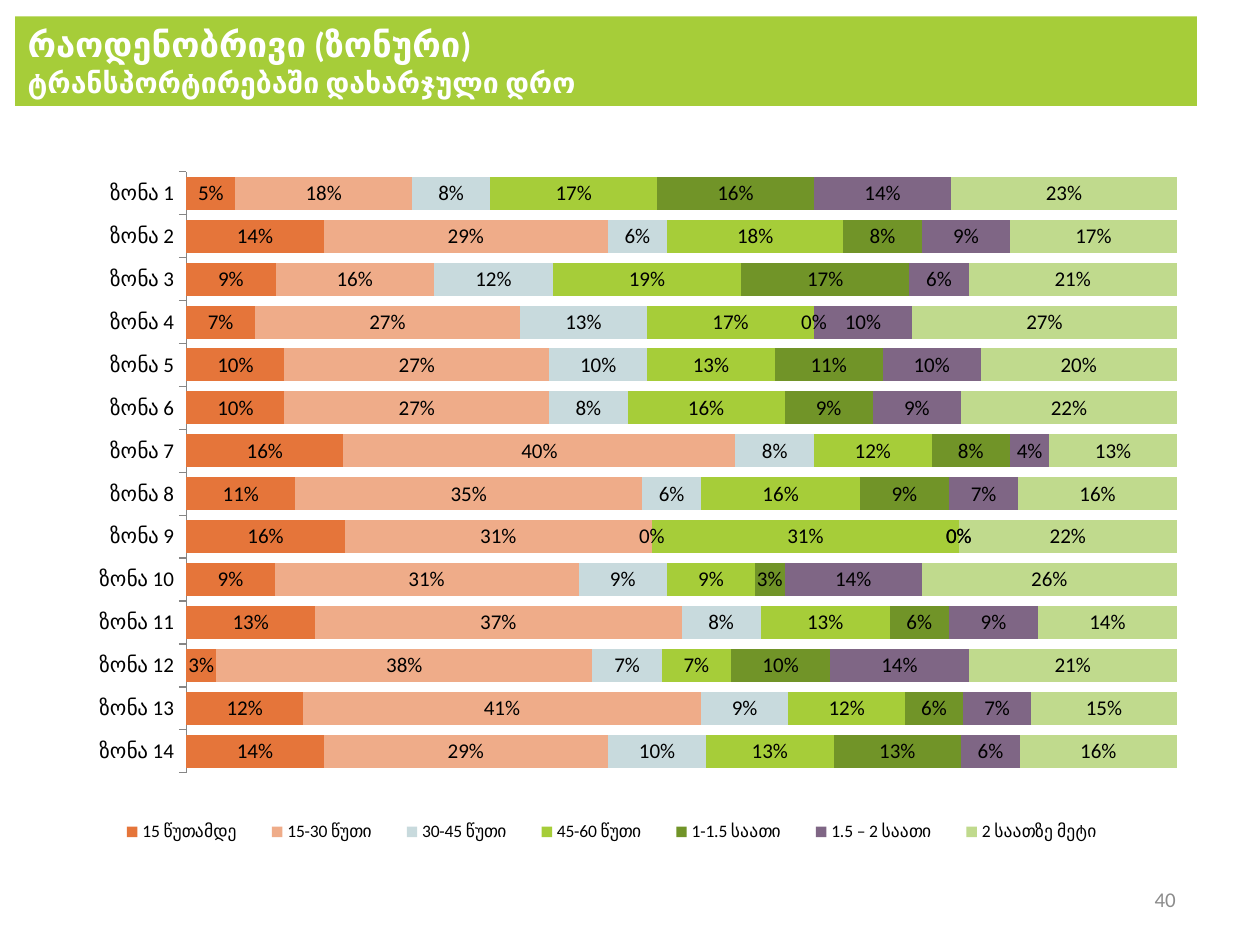
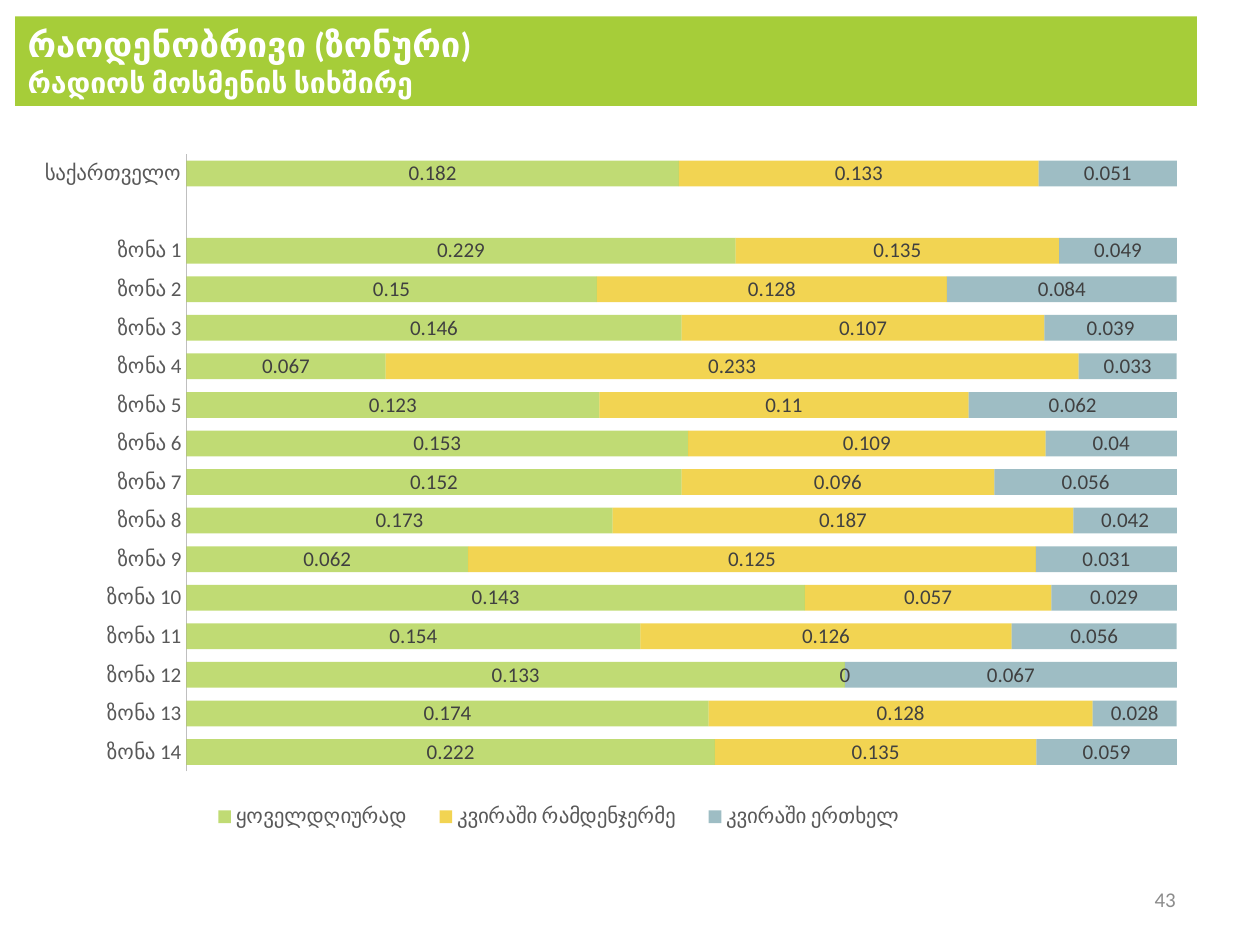
"""Build two zonal survey slides with full-width stacked bar charts."""
import pptx
import pptx.chart.data
import pptx.dml.color
import pptx.enum.chart
import pptx.enum.shapes
import pptx.enum.text
import pptx.oxml
import pptx.oxml.ns
import pptx.util

Inches = pptx.util.Inches
Pt = pptx.util.Pt

FONT = "Calibri"
COLORS = {
    "band": "A6CD39", "white": "FFFFFF", "number": "8C8C8C", "black": "000000",
    "axis": "868686", "orange": "E5753A", "peach": "EFAC89", "ice": "C8DADD",
    "moss": "719428", "plum": "7F6685", "pale": "C0DA8D",
    "gold": "EDC209", "teal": "76A2AB",
    "label": "404040", "tick": "595959", "light axis": "BFBFBF",
}
HEADING = "რაოდენობრივი (ზონური)"
ZONES = [f"ზონა {number}" for number in range(1, 15)]

SLIDES = [
    {
        "topic": "ტრანსპორტირებაში დახარჯული დრო",
        "number": 40,
        "box": (0.12, 0.99, 9.38, 5.94),
        "categories": ZONES,
        "series": [
            ("15 წუთამდე", "orange",
             [.05, .14, .09, .07, .10, .10, .16, .11, .16, .09, .13, .03, .12, .14]),
            ("15-30 წუთი", "peach",
             [.18, .29, .16, .27, .27, .27, .40, .35, .31, .31, .37, .38, .41, .29]),
            ("30-45 წუთი", "ice",
             [.08, .06, .12, .13, .10, .08, .08, .06, 0, .09, .08, .07, .09, .10]),
            ("45-60 წუთი", "band",
             [.17, .18, .19, .17, .13, .16, .12, .16, .31, .09, .13, .07, .12, .13]),
            ("1-1.5 საათი", "moss",
             [.16, .08, .17, 0, .11, .09, .08, .09, 0, .03, .06, .10, .06, .13]),
            ("1.5 – 2 საათი", "plum",
             [.14, .09, .06, .10, .10, .09, .04, .07, 0, .14, .09, .14, .07, .06]),
            ("2 საათზე მეტი", "pale",
             [.23, .17, .21, .27, .20, .22, .13, .16, .22, .26, .14, .21, .15, .16]),
        ],
        "style": {"gap": 30, "format": "0%", "opacity": 100, "tick": "OUTSIDE",
                  "axis": "axis", "text": "black", "label": "black",
                  "legend size": 10, "legend": (0.07, 0.915, 0.87, 0.06)},
    },
    {
        "topic": "რადიოს მოსმენის სიხშირე",
        "number": 43,
        "box": (0.12, 0.84, 9.38, 6.1),
        "categories": ["საქართველო", ""] + ZONES,
        "series": [
            ("ყოველდღიურად", "band",
             [.182, None, .229, .15, .146, .067, .123, .153, .152, .173, .062,
              .143, .154, .133, .174, .222]),
            ("კვირაში რამდენჯერმე", "gold",
             [.133, None, .135, .128, .107, .233, .11, .109, .096, .187, .125,
              .057, .126, 0, .128, .135]),
            ("კვირაში ერთხელ", "teal",
             [.051, None, .049, .084, .039, .033, .062, .04, .056, .042, .031,
              .029, .056, .067, .028, .059]),
        ],
        "style": {"gap": 50, "format": "General", "opacity": 70, "tick": "NONE",
                  "axis": "light axis", "text": "tick", "label": "label",
                  "legend size": 12, "legend": (0.15, 0.895, 0.62, 0.06)},
    },
]
PLOT_LAYOUT = (0.145, 0.063, 0.838, 0.803)


def rgb(name):
    return pptx.dml.color.RGBColor.from_string(COLORS[name])


def set_font(font, size, color, bold=False):
    font.name = FONT
    font.size = Pt(size)
    font.bold = bold
    font.color.rgb = rgb(color)


def add_text(slide, lines, box, color, fill=None, bold=False, align="LEFT"):
    left, top, width, height = map(Inches, box)
    if fill:
        shape = slide.shapes.add_shape(
            pptx.enum.shapes.MSO_SHAPE.RECTANGLE, left, top, width, height)
        shape.shadow.inherit = False
        shape.fill.solid()
        shape.fill.fore_color.rgb = rgb(fill)
        shape.line.fill.background()
    else:
        shape = slide.shapes.add_textbox(left, top, width, height)
    frame = shape.text_frame
    frame.word_wrap = True
    frame.vertical_anchor = pptx.enum.text.MSO_ANCHOR.MIDDLE
    for index, (text, size) in enumerate(lines):
        paragraph = frame.add_paragraph() if index else frame.paragraphs[0]
        paragraph.alignment = getattr(pptx.enum.text.PP_ALIGN, align)
        run = paragraph.add_run()
        run.text = text
        set_font(run.font, size, color, bold)


def set_layout(element, index, box, inner=False):
    for old_layout in element.xpath("c:layout"):
        element.remove(old_layout)
    target = '<c:layoutTarget val="inner"/>' if inner else ""
    modes = "".join(f'<c:{axis}Mode val="edge"/>' for axis in "xy")
    sizes = "".join(f'<c:{side} val="{value}"/>' for side, value in zip("xywh", box))
    element.insert(index, pptx.oxml.parse_xml(
        f'<c:layout {pptx.oxml.ns.nsdecls("c")}><c:manualLayout>'
        f"{target}{modes}{sizes}</c:manualLayout></c:layout>"))


def add_bars(slide, content):
    style = content["style"]
    data = pptx.chart.data.CategoryChartData(number_format=style["format"])
    data.categories = content["categories"]
    for name, color, values in content["series"]:
        data.add_series(name, values)
    chart = slide.shapes.add_chart(
        pptx.enum.chart.XL_CHART_TYPE.BAR_STACKED_100,
        *map(Inches, content["box"]), data).chart
    chart.has_title = False
    set_font(chart.font, 12, style["text"])

    plot = chart.plots[0]
    plot.gap_width = style["gap"]
    plot.overlap = 100
    plot.vary_by_categories = False
    for series, (name, color, values) in zip(plot.series, content["series"]):
        series.format.fill.solid()
        series.format.fill.fore_color.rgb = rgb(color)
        labels = series.data_labels
        labels.show_value = True
        labels.number_format = style["format"]
        labels.number_format_is_linked = False
        set_font(labels.font, 12, style["label"])
    if style["opacity"] < 100:
        for fill_color in chart.element.xpath(".//c:ser/c:spPr/a:solidFill/a:srgbClr"):
            fill_color.append(pptx.oxml.parse_xml(
                f'<a:alpha {pptx.oxml.ns.nsdecls("a")} val="{style["opacity"] * 1000}"/>'))

    axis = chart.category_axis
    axis.reverse_order = True
    axis.major_tick_mark = getattr(pptx.enum.chart.XL_TICK_MARK, style["tick"])
    axis.format.line.color.rgb = rgb(style["axis"])
    axis.format.line.width = Pt(0.75)
    set_font(axis.tick_labels.font, 12, style["text"])
    value_axis = chart.value_axis
    value_axis.visible = False
    value_axis.has_major_gridlines = False
    value_axis.minimum_scale, value_axis.maximum_scale = 0, 1

    chart.has_legend = True
    chart.legend.position = pptx.enum.chart.XL_LEGEND_POSITION.BOTTOM
    chart.legend.include_in_layout = False
    set_font(chart.legend.font, style["legend size"], style["text"])
    set_layout(chart.element.xpath("c:chart/c:plotArea")[0], 0, PLOT_LAYOUT, inner=True)
    set_layout(chart.element.xpath("c:chart/c:legend")[0], 1, style["legend"])


def main():
    presentation = pptx.Presentation()
    presentation.slide_width, presentation.slide_height = Inches(10), Inches(7.5)
    for content in SLIDES:
        slide = presentation.slides.add_slide(presentation.slide_layouts[6])
        add_text(slide, [(HEADING, 19.8), (content["topic"], 16.2)],
                 (0.12, 0.13, 9.38, 0.71), "white", fill="band", bold=True)
        add_text(slide, [(str(content["number"]), 12)],
                 (9.02, 6.94, 0.41, 0.4), "number", align="RIGHT")
        add_bars(slide, content)
    presentation.save("out.pptx")


if __name__ == "__main__":
    main()
